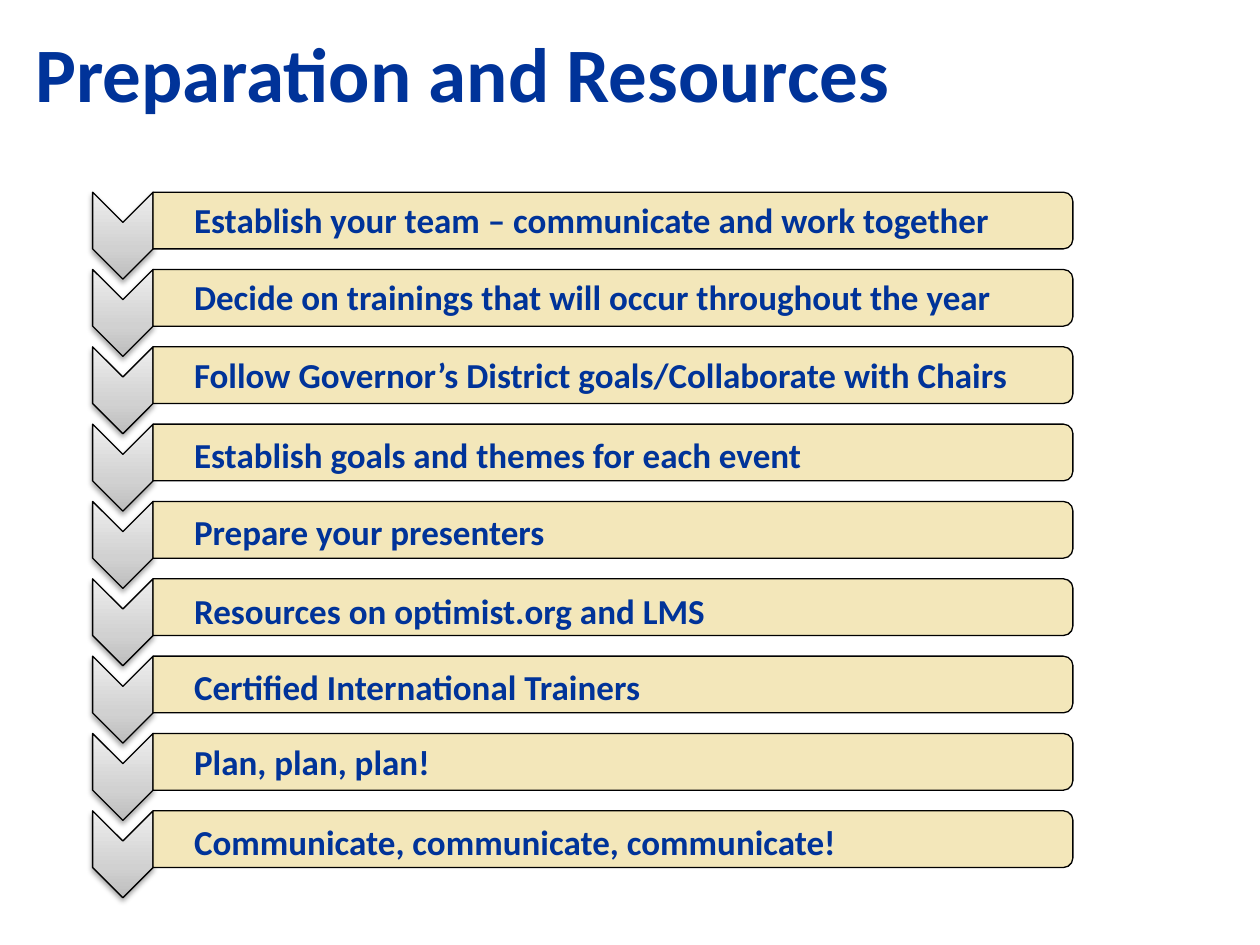
from lxml import etree
from pptx import Presentation
from pptx.dml.color import RGBColor
from pptx.enum.shapes import MSO_SHAPE
from pptx.enum.text import MSO_ANCHOR, MSO_AUTO_SIZE, PP_ALIGN
from pptx.oxml import parse_xml
from pptx.oxml.ns import nsdecls, qn
from pptx.util import Inches, Pt

CHEVRON = MSO_SHAPE.CHEVRON
BAR = MSO_SHAPE.ROUND_2_SAME_RECTANGLE
TOP = MSO_ANCHOR.TOP
LEFT = PP_ALIGN.LEFT
FIXED = MSO_AUTO_SIZE.NONE
GROW = MSO_AUTO_SIZE.SHAPE_TO_FIT_TEXT

BLUE = RGBColor(0x00, 0x33, 0x99)
SAND = RGBColor(0xF2, 0xE5, 0xB3)
BLACK = RGBColor(0x00, 0x00, 0x00)

GRADIENT = f"""<a:gradFill {nsdecls('a')} rotWithShape="0"><a:gsLst>
<a:gs pos="0"><a:srgbClr val="BDBDBD"/></a:gs>
<a:gs pos="35000"><a:srgbClr val="D1D1D1"/></a:gs>
<a:gs pos="100000"><a:srgbClr val="EEEEEE"/></a:gs>
</a:gsLst><a:lin ang="16200000" scaled="1"/></a:gradFill>"""
SHADOW = f"""<a:outerShdw {nsdecls('a')} blurRad="{Pt(3)}" dist="{Pt(1.8)}"
dir="5400000" rotWithShape="0"><a:srgbClr val="000000"><a:alpha val="35000"/>
</a:srgbClr></a:outerShdw>"""

# Each step: wording, top of its label, width of its label
STEPS = [
    ("Establish your team – communicate and work together", 1.53, 6.73),
    ("Decide on trainings that will occur throughout the year", 2.14, 6.6),
    ("Follow Governor’s District goals/Collaborate with Chairs", 2.76, 6.6),
    ("Establish goals and themes for each event", 3.39, 5.22),
    ("Prepare your presenters", 4, 5.22),
    ("Resources on optimist.org and LMS", 4.63, 5.22),
    ("Certified International Trainers", 5.23, 4.97),
    ("Plan, plan, plan!", 5.83, 5.02),
    ("Communicate, communicate, communicate!", 6.46, 5.71),
]
STEP_PITCH = (6.54 - 1.63) / (len(STEPS) - 1)


def add_rotated_shape(kind, left, top, width, height):
    """Add an outlined shape turned a quarter clockwise, without a shadow."""
    shape = slide.shapes.add_shape(
        kind, Inches(left), Inches(top), Inches(width), Inches(height))
    shape.rotation = 90
    shape.shadow.inherit = False
    shape.line.color.rgb = BLACK
    shape.line.width = Pt(0.75)
    return shape


def format_text(frame, size):
    frame.margin_left = frame.margin_right = Inches(0.05)
    frame.margin_top = frame.margin_bottom = Inches(0.05)
    frame.word_wrap = True
    frame.vertical_anchor = TOP
    para = frame.paragraphs[0]
    para.alignment = LEFT
    font = para.runs[0].font
    font.name = "Calibri"
    font.size = Pt(size)
    font.bold = True
    font.color.rgb = BLUE


deck = Presentation()
deck.slide_width = Inches(10)
deck.slide_height = Inches(7.5)
slide = deck.slides.add_slide(deck.slide_layouts[5])

title = slide.shapes.title
title.left, title.top = Inches(0.23), Inches(0.15)
title.width, title.height = Inches(7.6), Inches(1.25)
title.text_frame.text = "Preparation and Resources"
title.text_frame.auto_size = FIXED
format_text(title.text_frame, 44)

for index in range(len(STEPS)):
    offset = index * STEP_PITCH

    chevron = add_rotated_shape(CHEVRON, 0.63, 1.63 + offset, 0.69, 0.48)
    properties = chevron.element.spPr
    properties.find(qn("a:prstGeom")).addnext(parse_xml(GRADIENT))
    properties.find(qn("a:effectLst")).append(parse_xml(SHADOW))

    bar = add_rotated_shape(BAR, 4.64, -1.9 + offset, 0.45, 7.3)
    bar.fill.solid()
    bar.fill.fore_color.rgb = SAND
    color = bar.element.spPr.find(qn("a:solidFill")).find(qn("a:srgbClr"))
    etree.SubElement(color, qn("a:alpha")).set("val", "90000")

for wording, top, width in STEPS:
    label = slide.shapes.add_textbox(
        Inches(1.49), Inches(top), Inches(width), Inches(0.44))
    label.text_frame.text = wording
    label.text_frame.auto_size = GROW
    format_text(label.text_frame, 20)

deck.save("out.pptx")
